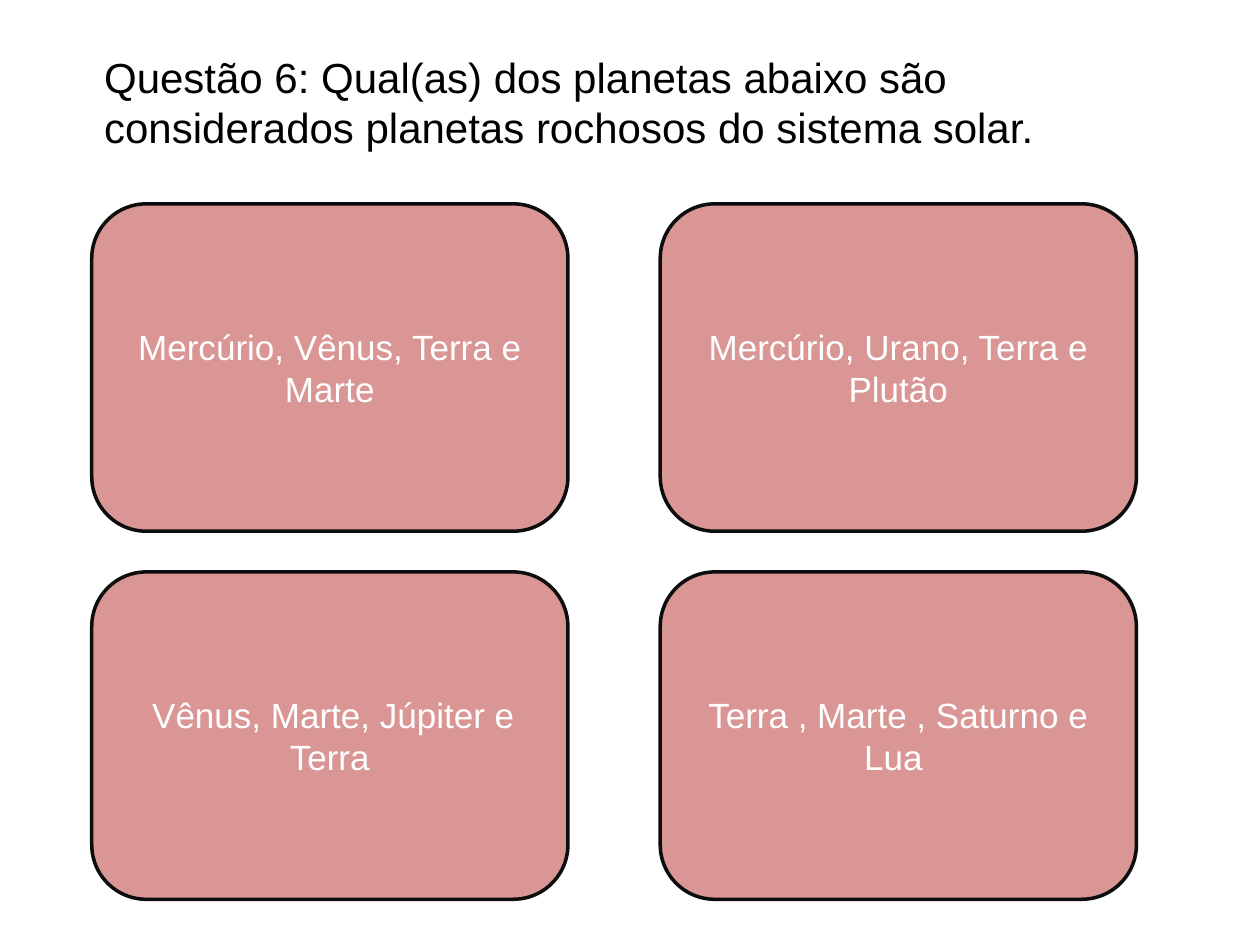
import pptx
import pptx.util
import pptx.dml.color
import pptx.enum.shapes
import pptx.enum.text

Cm = pptx.util.Cm
Pt = pptx.util.Pt
RGBColor = pptx.dml.color.RGBColor

BLACK = RGBColor(0, 0, 0)
WHITE = RGBColor(255, 255, 255)
ROSE = RGBColor(0xD9, 0x96, 0x94)
EDGE = RGBColor(0x0D, 0x0D, 0x0D)

LEFT = 1.85
TOP = 4.11
STEP_X = 11.46
STEP_Y = 7.42

TITLE = "Questão 6: Qual(as) dos planetas abaixo são considerados planetas rochosos do sistema solar."
CARDS = [
    [("Mercúrio, Vênus, Terra e Marte", 20, "Arial")],
    [("Mercúrio, Urano, Terra e Plutão", 20, "Arial")],
    [(" ", 18, "Calibri"), ("Vênus, Marte, Júpiter e Terra", 20, "Arial")],
    [("Terra , Marte , Saturno e Lua ", 20, "Arial")],
]


def add_run(para, text, size, font, color):
    run = para.add_run()
    run.text = text
    run.font.size = Pt(size)
    run.font.name = font
    run.font.color.rgb = color


def add_title(slide):
    box = slide.shapes.add_textbox(Cm(LEFT), Cm(0.91), Cm(21.06), Cm(2.31))
    frame = box.text_frame
    frame.word_wrap = True
    frame.auto_size = pptx.enum.text.MSO_AUTO_SIZE.SHAPE_TO_FIT_TEXT
    add_run(frame.paragraphs[0], TITLE, 24, "Arial", BLACK)


def add_card(slide, left, top, runs):
    kind = pptx.enum.shapes.MSO_SHAPE.ROUNDED_RECTANGLE
    card = slide.shapes.add_shape(kind, Cm(left), Cm(top), Cm(9.6), Cm(6.6))
    card.shadow.inherit = False
    card.fill.solid()
    card.fill.fore_color.rgb = ROSE
    card.line.color.rgb = EDGE
    card.line.width = Pt(2)
    frame = card.text_frame
    frame.word_wrap = True
    frame.vertical_anchor = pptx.enum.text.MSO_ANCHOR.MIDDLE
    para = frame.paragraphs[0]
    para.alignment = pptx.enum.text.PP_ALIGN.CENTER
    for text, size, font in runs:
        add_run(para, text, size, font, WHITE)


def main():
    deck = pptx.Presentation()
    deck.slide_width = Cm(25.4)
    deck.slide_height = Cm(19.05)
    slide = deck.slides.add_slide(deck.slide_layouts[6])
    add_title(slide)
    for index, runs in enumerate(CARDS):
        row, col = divmod(index, 2)
        add_card(slide, LEFT + col * STEP_X, TOP + row * STEP_Y, runs)
    deck.save("out.pptx")


if __name__ == "__main__":
    main()
